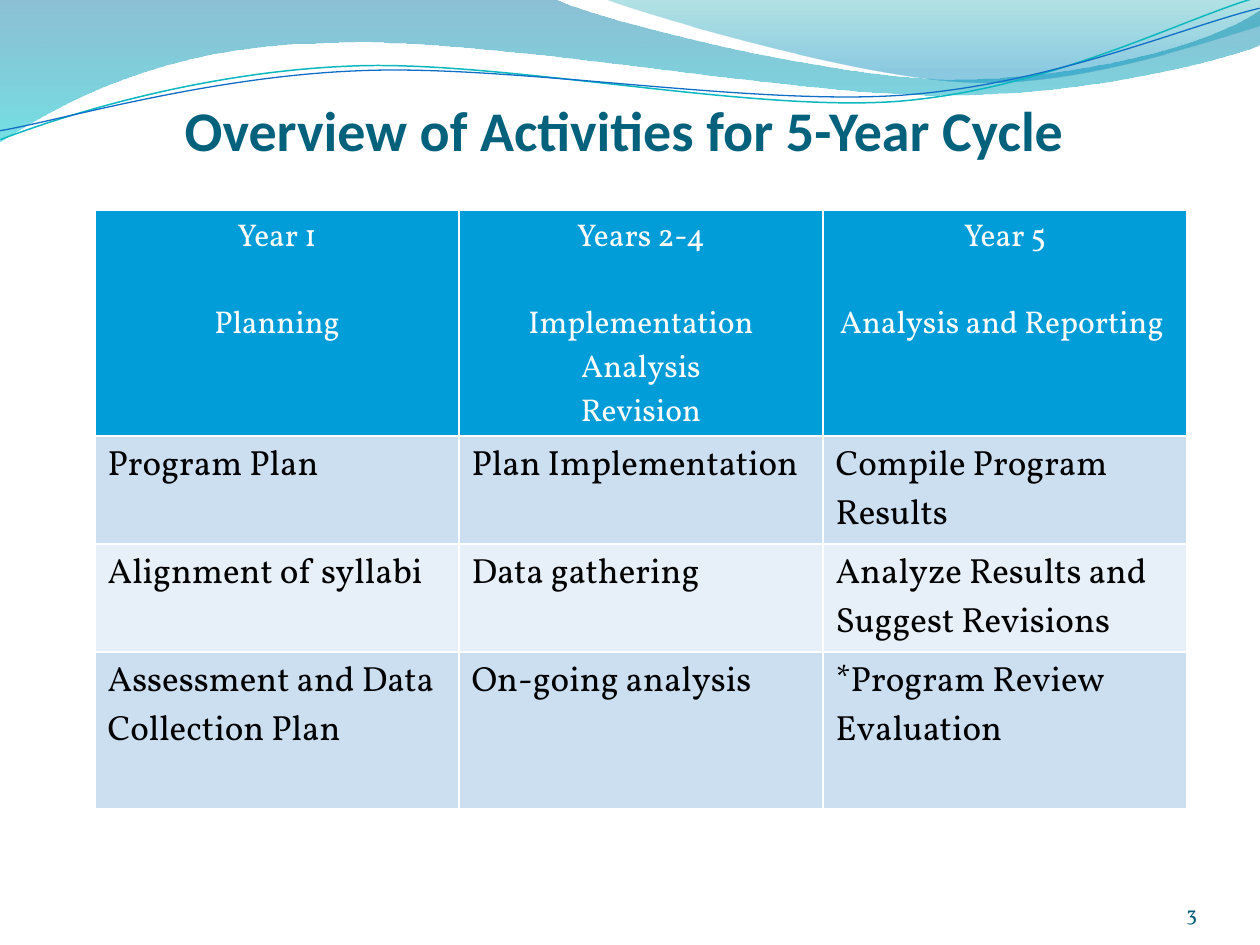
from lxml import etree
from pptx import Presentation, util as u
from pptx.dml.color import RGBColor
from pptx.enum import text
from pptx.oxml import ns

# Content
TITLE = "Overview of Activities for 5-Year Cycle"
PAGE = "3"
HEADER = [
    ["Year 1", "Planning"],
    ["Years 2-4", "Implementation", "Analysis", "Revision"],
    ["Year 5", "Analysis and Reporting "],
]
ACTIVITIES = [
    ["Program Plan", "Plan Implementation", "Compile Program Results"],
    ["Alignment of syllabi", "Data gathering", "Analyze Results and Suggest Revisions"],
    ["Assessment and Data Collection Plan", "On-going analysis", "*Program Review Evaluation"],
]
COLORS = dict(title="04617B", page="045D75", header="009DD9", band="CCDFF1",
              light="E7EFF8", white="FFFFFF", black="000000")

# Waves in px: a pair is a straight step, six numbers are a Bezier step
BANDS = [
    dict(start=(0, 0),
         steps=[(554, -1), (600, 21, 837, 79, 955, 79), (1074, 79, 1207, 47, 1260, 11),
                (1261, 45), (1239, 55, 1096, 96, 940, 95), (784, 95, 481, 35, 324, 43),
                (163, 45, 58, 105, -1, 142)],
         stops=[(0, "0074A1", 45), (1, "00C6CF", 55)]),
    dict(start=(604, -1),
         steps=[(641, 14, 859, 78, 969, 82), (1079, 87, 1211, 40, 1260, 26), (1260, 0)],
         stops=[(0, "00A1A9", 30), (0.8, "008BBF", 45)]),
]
STRANDS = [
    dict(start=(-2, 110), color="0AB8BF", width=0.85,
         steps=[(58, 90, 199, 52, 350, 53), (499, 53, 745, 118, 896, 114),
                (1049, 109, 1184, 45, 1260, 27)]),
    dict(start=(-2, 101), color="0F6FC6", width=0.75,
         steps=[(57, 94, 207, 57, 357, 58), (509, 58, 750, 112, 902, 108),
                (1052, 104, 1188, 52, 1262, 38)]),
]
STRAND_TURN = 357.3

# Layout in px
TITLE_BOX = (147, 105, 955, 58)
PAGE_BOX = (1092, 876, 105, 50)
TABLE_LEFT, TABLE_TOP, COLUMN = 95, 210, 364
ROWS = [226, 108, 108, 157]
SCALE = 914400 / 126


def px(value):
    return u.Emu(round(value * SCALE))


def rgb(name):
    return RGBColor.from_string(COLORS.get(name, name))


def add_wave(slide, wave, close):
    steps = wave["steps"]
    points = [step[i:i + 2] for step in steps for i in range(0, len(step), 2)]
    builder = slide.shapes.build_freeform(*map(px, wave["start"]), scale=1.0)
    builder.add_line_segments([(px(x), px(y)) for x, y in points], close=close)
    shape = builder.convert_to_shape()
    shape.shadow.inherit = False
    # Join each three straight segments of a Bezier step into one curve
    segments = iter(list(shape._element.iter(ns.qn("a:lnTo"))))
    for step in steps:
        first = next(segments)
        if len(step) == 6:
            first.tag = ns.qn("a:cubicBezTo")
            for _ in range(2):
                segment = next(segments)
                first.append(segment[0])
                segment.getparent().remove(segment)
    return shape


def write(paragraph, words, align, **style):
    paragraph.alignment = align
    run = paragraph.add_run()
    run.text = words
    run.font.color.rgb = rgb(style.pop("color"))
    for key, value in style.items():
        setattr(run.font, key, value)


def add_label(slide, box, words, align, top_inset=0, **style):
    frame = slide.shapes.add_textbox(*map(px, box)).text_frame
    settings = dict(word_wrap=True, vertical_anchor=text.MSO_ANCHOR.BOTTOM, margin_left=0,
                    margin_right=0, margin_top=px(top_inset), margin_bottom=0)
    for key, value in settings.items():
        setattr(frame, key, value)
    write(frame.paragraphs[0], words, align, **style)


def fill_cell(cell, color):
    cell.fill.solid()
    cell.fill.fore_color.rgb = rgb(color)


deck = Presentation()
deck.slide_width, deck.slide_height = px(1260), px(945)
slide = deck.slides.add_slide(deck.slide_layouts[6])

# Wave bands and thin strands
for band in BANDS:
    shape = add_wave(slide, band, close=True)
    shape.line.fill.background()
    shape.fill.gradient()
    shape.fill.gradient_angle = 270
    for stop, (position, color, _) in zip(shape.fill.gradient_stops, band["stops"]):
        stop.position = position
        stop.color.rgb = rgb(color)
    for tint, (_, _, opacity) in zip(shape._element.iter(ns.qn("a:srgbClr")), band["stops"]):
        etree.SubElement(tint, ns.qn("a:alpha"), val=str(opacity * 1000))
for strand in STRANDS:
    shape = add_wave(slide, strand, close=False)
    shape.rotation = STRAND_TURN
    shape.fill.background()
    shape.line.color.rgb = rgb(strand["color"])
    shape.line.width = u.Pt(strand["width"])

# Title
add_label(slide, TITLE_BOX, TITLE, text.PP_ALIGN.CENTER, top_inset=6,
          name="Calibri", size=u.Pt(32), bold=True, color="title")

# Cycle table; the white rules come from its table style
cycle = slide.shapes.add_table(len(ROWS), len(HEADER), px(TABLE_LEFT), px(TABLE_TOP),
                               px(COLUMN * len(HEADER)), px(sum(ROWS))).table
for column in cycle.columns:
    column.width = px(COLUMN)
for row, height in zip(cycle.rows, ROWS):
    row.height = px(height)
for c, phases in enumerate(HEADER):
    cell = cycle.cell(0, c)
    fill_cell(cell, "header")
    for i, phase in enumerate(phases):
        paragraph = cell.text_frame.add_paragraph() if i else cell.text_frame.paragraphs[0]
        if i == 1:
            paragraph.space_before = u.Pt(25)
        write(paragraph, phase, text.PP_ALIGN.CENTER,
              name="Vollkorn", size=u.Pt(18), bold=False, color="white")
for r, activities in enumerate(ACTIVITIES, 1):
    for c, activity in enumerate(activities):
        cell = cycle.cell(r, c)
        fill_cell(cell, "band" if r % 2 else "light")
        write(cell.text_frame.paragraphs[0], activity, text.PP_ALIGN.LEFT,
              name="Vollkorn", size=u.Pt(20), color="black")

# Page number
add_label(slide, PAGE_BOX, PAGE, text.PP_ALIGN.RIGHT,
          name="Vollkorn", size=u.Pt(12), color="page")

deck.save("out.pptx")
